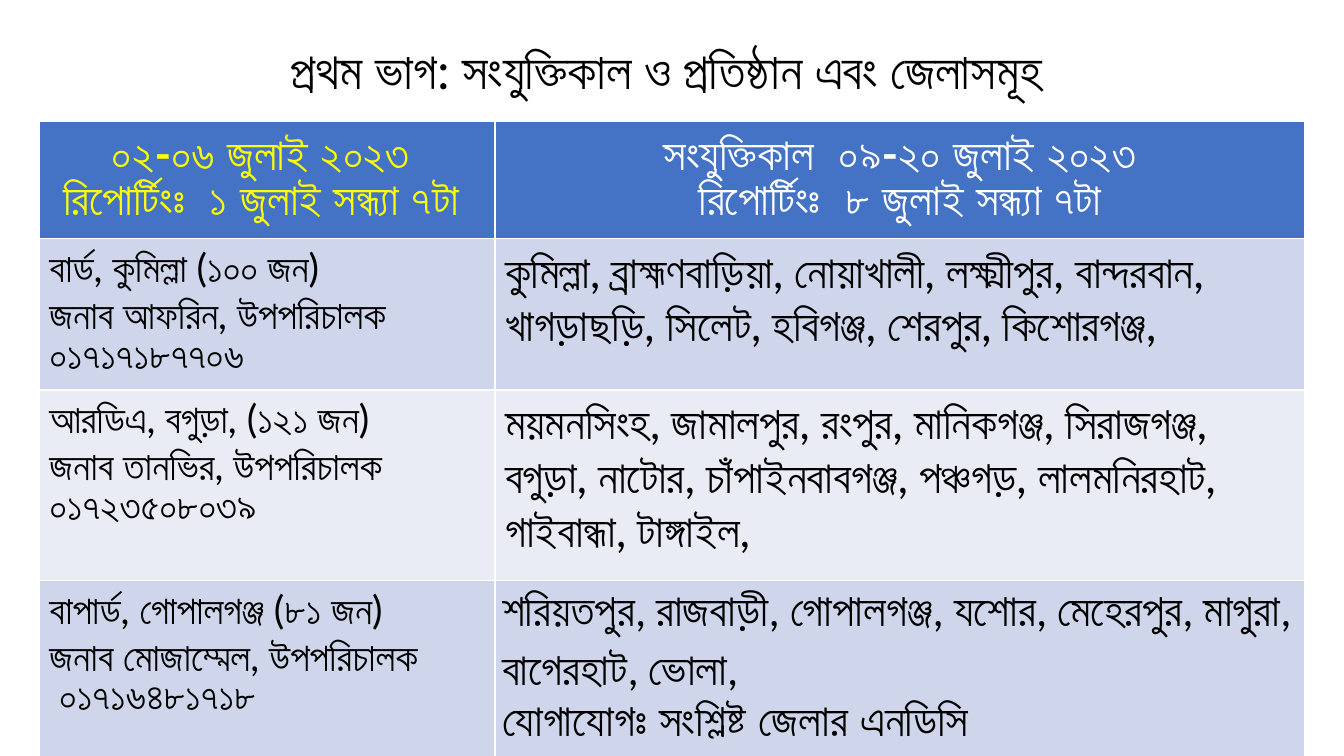
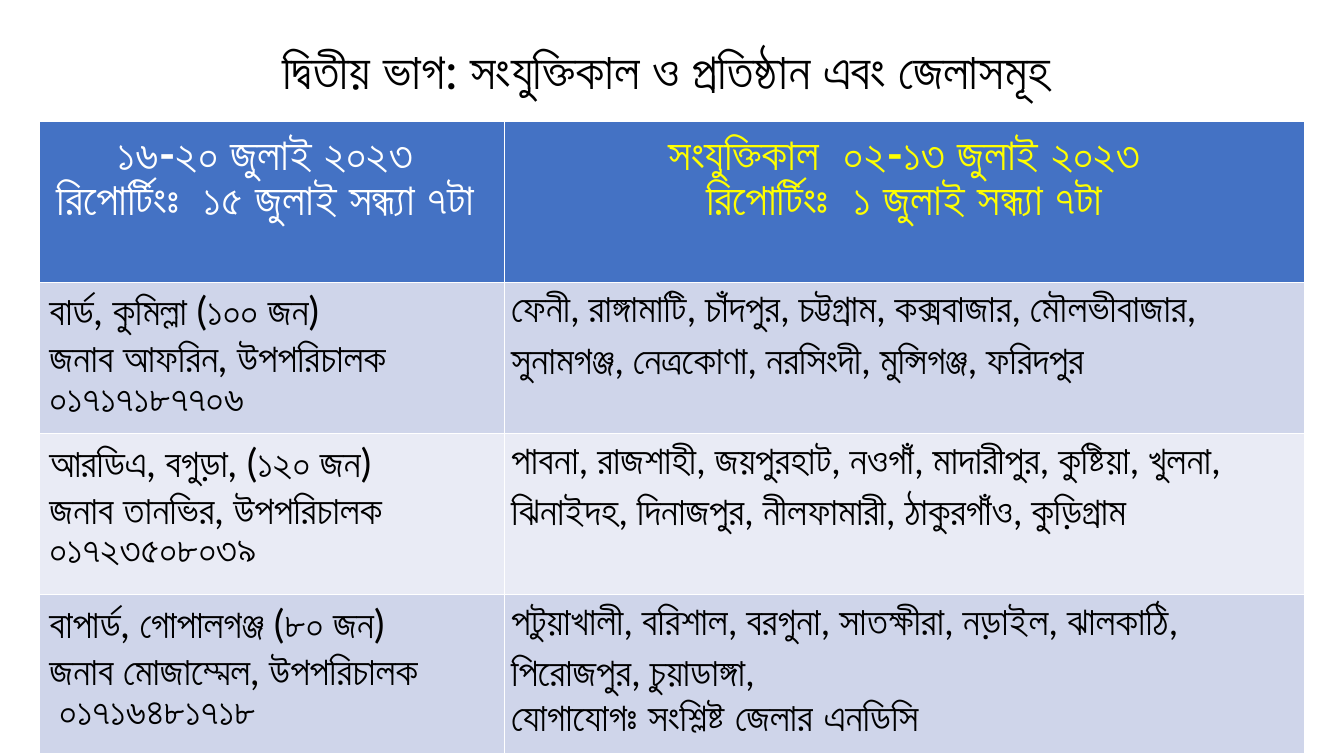
import pptx
import pptx.dml.color
import pptx.enum.text
import pptx.util
from pptx.util import Inches

BLACK, WHITE, YELLOW = "000000", "FFFFFF", "FFFF00"
HEADER_FILL, BAND_FILLS = "4472C4", ("CFD5EA", "E9EBF5")
CENTER = pptx.enum.text.PP_ALIGN.CENTER

# Institute name, its officer and the officer's number; the count differs by slide
INSTITUTES = [
    ("বার্ড, কুমিল্লা ({} জন)", "জনাব আফরিন, উপপরিচালক", "০১৭১৭১৮৭৭০৬"),
    ("আরডিএ, বগুড়া, ({} জন)", "জনাব তানভির, উপপরিচালক", "০১৭২৩৫০৮০৩৯"),
    ("বাপার্ড, গোপালগঞ্জ ({} জন)", "জনাব মোজাম্মেল, উপপরিচালক", " ০১৭১৬৪৮১৭১৮"),
]
CONTACT = "যোগাযোগঃ সংশ্লিষ্ট জেলার এনডিসি"

ROOMY = {"font": "Lato", "size": 32}
COMPACT = {"font": "Calibri", "line_spacing": 1.07}

PARTS = [
    {
        "title": "প্রথম ভাগ: সংযুক্তিকাল ও প্রতিষ্ঠান এবং জেলাসমূহ ",
        "columns": (4.52, 8.03),
        "rows": (1.06, 1.42, 1.89, 1.97),
        "headers": [
            (["০২-০৬ জুলাই ২০২৩ ", "রিপোর্টিংঃ  ১ জুলাই সন্ধ্যা ৭টা "], YELLOW),
            (["সংযুক্তিকাল  ০৯-২০ জুলাই ২০২৩", "রিপোর্টিংঃ  ৮ জুলাই সন্ধ্যা ৭টা"], WHITE),
        ],
        "counts": ("১০০", "১২১", "৮১"),
        "districts": [
            ("কুমিল্লা, ব্রাহ্মণবাড়িয়া, নোয়াখালী, লক্ষ্মীপুর, বান্দরবান, খাগড়াছড়ি, "
             "সিলেট, হবিগঞ্জ, শেরপুর, কিশোরগঞ্জ,", ROOMY),
            ("ময়মনসিংহ, জামালপুর, রংপুর, মানিকগঞ্জ, সিরাজগঞ্জ, বগুড়া, নাটোর, "
             "চাঁপাইনবাবগঞ্জ, পঞ্চগড়, লালমনিরহাট, গাইবান্ধা, টাঙ্গাইল,", ROOMY),
            ("শরিয়তপুর, রাজবাড়ী, গোপালগঞ্জ, যশোর, মেহেরপুর, মাগুরা, বাগেরহাট, ভোলা,",
             {**COMPACT, "size": 32}),
        ],
    },
    {
        "title": "দ্বিতীয় ভাগ: সংযুক্তিকাল ও প্রতিষ্ঠান এবং জেলাসমূহ ",
        "columns": (4.61, 7.94),
        "rows": (1.6, 1.42, 1.6, 1.58),
        "headers": [
            (["১৬-২০ জুলাই ২০২৩ ", "রিপোর্টিংঃ  ১৫ জুলাই সন্ধ্যা ৭টা "], WHITE),
            (["সংযুক্তিকাল  ০২-১৩ জুলাই ২০২৩", "রিপোর্টিংঃ  ১ জুলাই সন্ধ্যা ৭টা"], YELLOW),
        ],
        "counts": ("১০০", "১২০", "৮০"),
        "districts": [
            ("ফেনী, রাঙ্গামাটি, চাঁদপুর, চট্টগ্রাম, কক্সবাজার, মৌলভীবাজার, সুনামগঞ্জ, "
             "নেত্রকোণা, নরসিংদী, মুন্সিগঞ্জ, ফরিদপুর", COMPACT),
            ("পাবনা, রাজশাহী, জয়পুরহাট, নওগাঁ, মাদারীপুর, কুষ্টিয়া, খুলনা, ঝিনাইদহ, "
             "দিনাজপুর, নীলফামারী, ঠাকুরগাঁও, কুড়িগ্রাম", COMPACT),
            ("পটুয়াখালী, বরিশাল, বরগুনা, সাতক্ষীরা, নড়াইল, ঝালকাঠি, পিরোজপুর, চুয়াডাঙ্গা,",
             COMPACT),
        ],
    },
]


def color(hex_string):
    return pptx.dml.color.RGBColor.from_string(hex_string)


def write(text_frame, lines, font="Lato", size=28, text_color=BLACK, bold=False,
          alignment=None, line_spacing=None, bold_last=False):
    """Write each line as a paragraph; bold_last makes only the last one bold."""
    for index, line in enumerate(lines):
        paragraph = text_frame.paragraphs[0] if index == 0 else text_frame.add_paragraph()
        paragraph.alignment = alignment
        paragraph.line_spacing = line_spacing
        run = paragraph.add_run()
        run.text = line
        run.font.name = font
        run.font.size = pptx.util.Pt(size)
        run.font.bold = bold or (bold_last and index == len(lines) - 1)
        run.font.color.rgb = color(text_color)


def add_title(slide, title):
    text_frame = slide.shapes.add_textbox(
        Inches(0.92), Inches(0.4), Inches(11.5), Inches(0.66)).text_frame
    text_frame.word_wrap = True
    text_frame.vertical_anchor = pptx.enum.text.MSO_ANCHOR.MIDDLE
    write(text_frame, [title], size=36, alignment=CENTER, line_spacing=0.9)


def fill_cell(cell, fill, lines, **text_format):
    cell.fill.solid()
    cell.fill.fore_color.rgb = color(fill)
    if text_format.get("font") == COMPACT["font"]:
        cell.margin_left = cell.margin_right = Inches(0.07)
        cell.margin_top = cell.margin_bottom = 0
    write(cell.text_frame, lines, **text_format)


def add_schedule(slide, part):
    columns, rows = part["columns"], part["rows"]
    table = slide.shapes.add_table(
        len(rows), len(columns), Inches(0.39), Inches(1.2),
        Inches(sum(columns)), Inches(sum(rows))).table
    for column, width in zip(table.columns, columns):
        column.width = Inches(width)
    for row, height in zip(table.rows, rows):
        row.height = Inches(height)

    for index, (lines, text_color) in enumerate(part["headers"]):
        fill_cell(table.cell(0, index), HEADER_FILL, lines, size=32,
                  text_color=text_color, bold=True, alignment=CENTER)

    body = zip(INSTITUTES, part["counts"], part["districts"])
    for index, ((name, officer, phone), count, (districts, district_format)) in enumerate(body):
        fill = BAND_FILLS[index % 2]
        is_last = index == len(INSTITUTES) - 1
        fill_cell(table.cell(index + 1, 0), fill, [name.format(count), officer, phone])
        fill_cell(table.cell(index + 1, 1), fill,
                  [districts, CONTACT] if is_last else [districts],
                  bold_last=is_last, **district_format)


def main():
    presentation = pptx.Presentation()
    presentation.slide_width = Inches(13.33)
    presentation.slide_height = Inches(7.5)
    for part in PARTS:
        slide = presentation.slides.add_slide(presentation.slide_layouts[6])
        add_title(slide, part["title"])
        add_schedule(slide, part)
    presentation.save("out.pptx")


if __name__ == "__main__":
    main()
